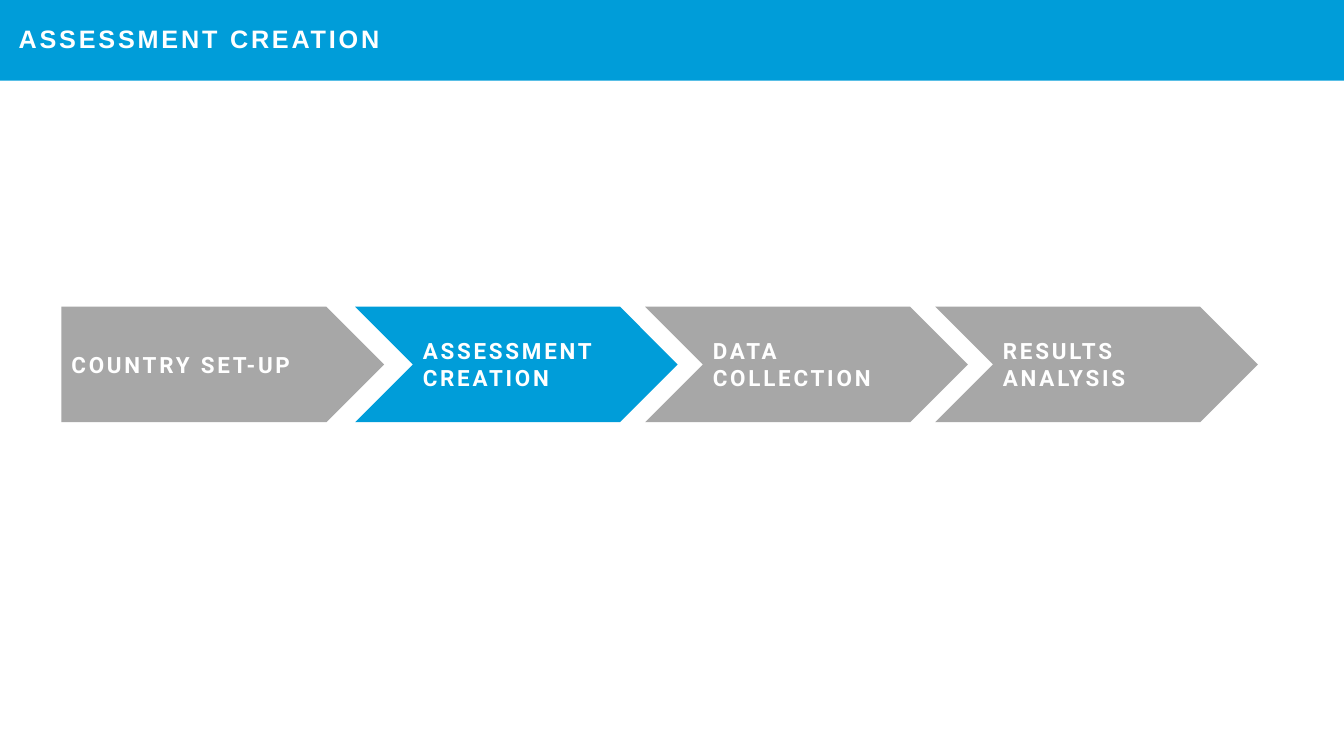
from pptx import Presentation
from pptx.dml.color import RGBColor
from pptx.enum import shapes, text
from pptx.util import Cm, Pt

BLUE = RGBColor(0x00, 0x9D, 0xD9)
GREY = RGBColor(0xA7, 0xA7, 0xA7)
WHITE = RGBColor(0xFF, 0xFF, 0xFF)


def write(sp, words, size, font, fill, inset=0.25, line_spacing=1.0):
    """Fill a shape and set bold, white, letter-spaced text in it."""
    sp.fill.solid()
    sp.fill.fore_color.rgb = fill
    sp.line.fill.background()
    tf = sp.text_frame
    tf.word_wrap = True
    tf.auto_size = text.MSO_AUTO_SIZE.NONE
    tf.vertical_anchor = text.MSO_ANCHOR.MIDDLE
    tf.margin_left = Cm(inset)
    p = tf.paragraphs[0]
    p.alignment = text.PP_ALIGN.LEFT
    p.line_spacing = line_spacing
    r = p.add_run()
    r.text = words
    r.font.size = Pt(size)
    r.font.name = font
    r.font.bold = True
    r.font.color.rgb = WHITE
    r.font._element.set("spc", "200")


prs = Presentation()
prs.slide_width, prs.slide_height = Cm(33.87), Cm(19.05)
s = prs.slides.add_slide(prs.slide_layouts[5])

title = s.shapes.title
title.left, title.top = Cm(0), Cm(0)
title.width, title.height = prs.slide_width, Cm(2.03)
write(title, "ASSESSMENT CREATION", 18, "Arial", BLUE, inset=0.47, line_spacing=0.9)

PENTAGON, CHEVRON = shapes.MSO_SHAPE.PENTAGON, shapes.MSO_SHAPE.CHEVRON
steps = [
    ("COUNTRY SET-UP", PENTAGON, 1.55, GREY),
    ("ASSESSMENT CREATION", CHEVRON, 8.95, BLUE),
    ("DATA COLLECTION", CHEVRON, 16.26, GREY),
    ("RESULTS ANALYSIS", CHEVRON, 23.57, GREY),
]
for words, kind, left, fill in steps:
    sp = s.shapes.add_shape(kind, Cm(left), Cm(7.73), Cm(8.13), Cm(2.91))
    sp.shadow.inherit = False
    write(sp, words, 16, "Roboto", fill)

prs.save("out.pptx")
